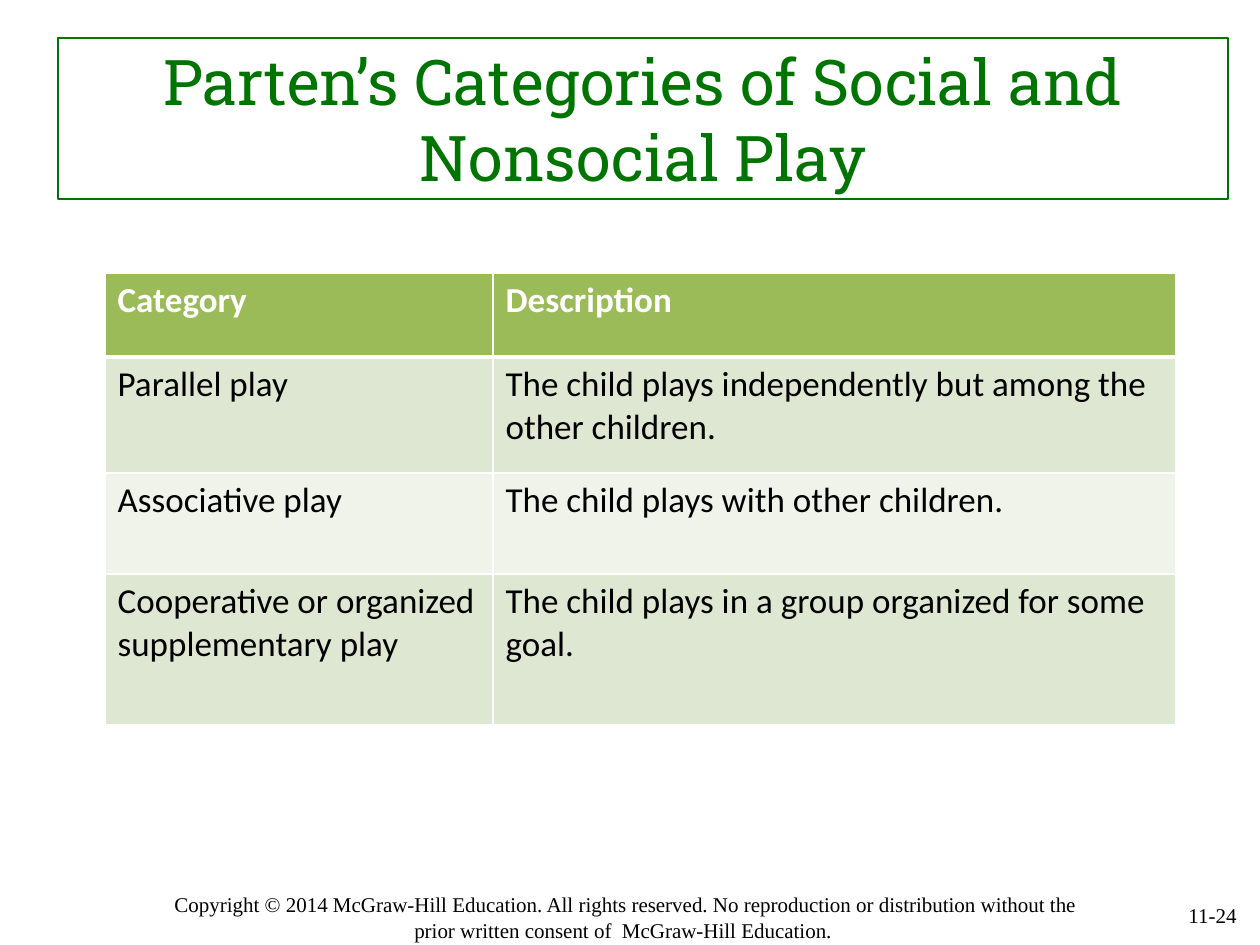
import dataclasses

import lxml.etree
import pptx
import pptx.dml.color
import pptx.enum.shapes
import pptx.enum.text
import pptx.oxml.ns
import pptx.util

EMU_PER_PX = 914400 / 126
ALIGN = pptx.enum.text.PP_ALIGN
ANCHOR = pptx.enum.text.MSO_ANCHOR


@dataclasses.dataclass(frozen=True)
class Theme:
    green: str = "007400"
    black: str = "000000"
    white: str = "FFFFFF"
    header_fill: str = "9BBB59"
    band_fills: tuple = ("DEE7D1", "EFF3EA")
    title_font: str = "Roboto Slab"
    table_font: str = "Calibri"
    footer_font: str = "Times New Roman"
    title_size: int = 36
    table_size: int = 20
    footer_size: int = 12
    title_line: float = 1.25
    cell_line: int = 1
    header_line: int = 3


THEME = Theme()

ROWS = [
    ("Category", "Description"),
    ("Parallel play", "The child plays independently but among the other children."),
    ("Associative play", "The child plays with other children."),
    ("Cooperative or organized\nsupplementary play",
     "The child plays in a group organized for some goal."),
]


def px(length):
    return pptx.util.Emu(round(length * EMU_PER_PX))


def rgb(color):
    return pptx.dml.color.RGBColor.from_string(color)


def write_text(frame, text, *, font, size, color, bold=False,
               align=ALIGN.LEFT, anchor=ANCHOR.TOP):
    """Fill a text frame, one paragraph for each line of text."""
    frame.word_wrap = True
    frame.vertical_anchor = anchor
    for index, line in enumerate(text.split("\n")):
        para = frame.add_paragraph() if index else frame.paragraphs[0]
        para.alignment = align
        span = para.add_run()
        span.text = line
        span.font.name = font
        span.font.size = pptx.util.Pt(size)
        span.font.bold = bold
        span.font.color.rgb = rgb(color)


def set_borders(cell, widths):
    """Draw white cell borders; widths maps L, R, T, B (in that order) to points."""
    properties = cell._tc.get_or_add_tcPr()
    qn = pptx.oxml.ns.qn
    for index, (side, width) in enumerate(widths.items()):
        border = lxml.etree.Element(qn(f"a:ln{side}"), w=str(pptx.util.Pt(width)))
        fill = lxml.etree.SubElement(border, qn("a:solidFill"))
        lxml.etree.SubElement(fill, qn("a:srgbClr"), val=THEME.white)
        properties.insert(index, border)


def add_title(page, left, top, width, height):
    box = page.shapes.add_shape(pptx.enum.shapes.MSO_SHAPE.RECTANGLE,
                                px(left), px(top), px(width), px(height))
    box.shadow.inherit = False
    box.fill.background()
    box.line.color.rgb = rgb(THEME.green)
    box.line.width = pptx.util.Pt(THEME.title_line)
    write_text(box.text_frame, "Parten’s Categories of Social and Nonsocial Play",
               font=THEME.title_font, size=THEME.title_size, color=THEME.green,
               align=ALIGN.CENTER, anchor=ANCHOR.MIDDLE)


def add_play_table(page, left, top, column_widths, row_heights):
    table = page.shapes.add_table(
        len(row_heights), len(column_widths), px(left), px(top),
        px(sum(column_widths)), px(sum(row_heights))).table
    for column, width in zip(table.columns, column_widths):
        column.width = px(width)
    for row_index, (row, height, texts) in enumerate(
            zip(table.rows, row_heights, ROWS)):
        row.height = px(height)
        is_header = row_index == 0
        fill = THEME.header_fill if is_header else THEME.band_fills[(row_index - 1) % 2]
        widths = dict.fromkeys("LRTB", THEME.cell_line)
        if is_header:
            widths["B"] = THEME.header_line
        elif row_index == 1:
            widths["T"] = THEME.header_line
        for cell, text in zip(row.cells, texts):
            cell.fill.solid()
            cell.fill.fore_color.rgb = rgb(fill)
            set_borders(cell, widths)
            write_text(cell.text_frame, text, font=THEME.table_font,
                       size=THEME.table_size, bold=is_header,
                       color=THEME.white if is_header else THEME.black)


def add_footer(page, left, top, width, height):
    """Place the copyright line and, at the right edge, the page number."""
    style = dict(font=THEME.footer_font, size=THEME.footer_size, color=THEME.black)
    copyright_box = page.shapes.add_textbox(
        px(left), px(top + 2), px(932), px(height))
    frame = copyright_box.text_frame
    frame.margin_left = frame.margin_right = frame.margin_top = frame.margin_bottom = 0
    write_text(frame,
               "Copyright © 2014 McGraw-Hill Education. All rights reserved. "
               "No reproduction or distribution without the prior written "
               "consent of  McGraw-Hill Education. ",
               align=ALIGN.CENTER, **style)
    number_width = 294
    number_box = page.shapes.add_textbox(
        px(left + width - number_width), px(top), px(number_width), px(height))
    write_text(number_box.text_frame, "11-24",
               align=ALIGN.RIGHT, anchor=ANCHOR.MIDDLE, **style)


def main():
    deck = pptx.Presentation()
    deck.slide_width, deck.slide_height = px(1260), px(945)
    page = deck.slides.add_slide(deck.slide_layouts[6])
    add_footer(page, 160, 890, 1089, 50)
    add_title(page, 58, 38, 1170, 161)
    add_play_table(page, 105, 273, (388, 683), (84, 116, 101, 151))
    deck.save("out.pptx")


if __name__ == "__main__":
    main()
